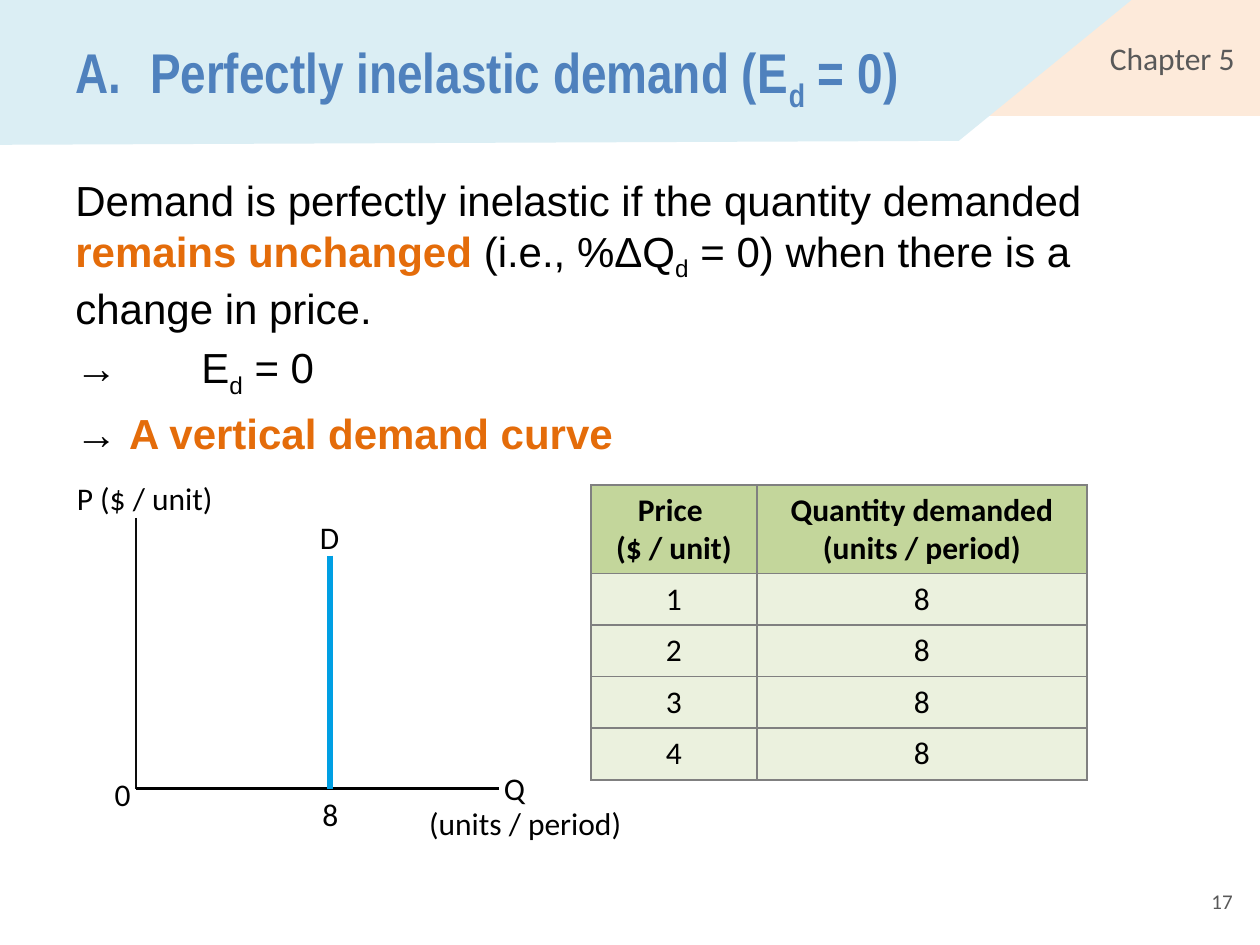
import dataclasses
import typing

import lxml.etree
import pptx
import pptx.dml.color
import pptx.enum.shapes
import pptx.enum.text
import pptx.oxml.ns
import pptx.util

Cm = pptx.util.Cm
Align = pptx.enum.text.PP_ALIGN
Anchor = pptx.enum.text.MSO_ANCHOR
qn = pptx.oxml.ns.qn


@dataclasses.dataclass(frozen=True)
class Theme:
    blue: str = "4F81BD"
    sky: str = "DBEEF4"
    peach: str = "FDEADA"
    orange: str = "E46C0A"
    gray: str = "595959"
    black: str = "000000"
    axis: str = "0D0D0D"
    curve: str = "009FE3"
    head: str = "C3D69B"
    cell: str = "EBF1DE"
    grid: str = "808080"
    sans: str = "Arial"
    narrow: str = "Arial Narrow"
    label: str = "Calibri"
    title: int = 32
    body: int = 24
    text: int = 18
    small: int = 12


THEME = Theme()


class Part(typing.NamedTuple):
    text: str
    bold: bool = False
    color: str = THEME.black
    sub: bool = False


class Label(typing.NamedTuple):
    text: str
    left: float
    top: float
    width: float


class Line(typing.NamedTuple):
    x1: float
    y1: float
    x2: float
    y2: float
    color: str
    width: float


def rgb(color: str) -> pptx.dml.color.RGBColor:
    return pptx.dml.color.RGBColor.from_string(color)


def write(para, *parts, font=THEME.label, size=THEME.text, color=None,
          bold=False, align=Align.LEFT, before=0, hang=0, tab=0) -> None:
    """Fill a paragraph with strings or Parts; a newline is a line break."""
    para.alignment = align
    para.space_before = pptx.util.Pt(before)
    props = para._p.get_or_add_pPr()
    if hang:
        props.set("marL", str(Cm(hang)))
        props.set("indent", str(-Cm(hang)))
    if tab:
        tabs = lxml.etree.SubElement(props, qn("a:tabLst"))
        lxml.etree.SubElement(tabs, qn("a:tab"), pos=str(Cm(tab)), algn="l")
    for part in parts:
        if isinstance(part, str):
            part = Part(part)
        for i, piece in enumerate(part.text.split("\n")):
            if i:
                para.add_line_break()
            run = para.add_run()
            run.text = piece
            run.font.name = font
            run.font.size = pptx.util.Pt(size)
            run.font.bold = bold or part.bold
            run.font.color.rgb = rgb(color or part.color)
            if part.sub:
                run.font._element.set("baseline", "-25000")


def add_box(shapes, left: float, top: float, width: float, height: float):
    frame = shapes.add_textbox(Cm(left), Cm(top), Cm(width), Cm(height)).text_frame
    frame.word_wrap = True
    return frame


def paint(shape, color: str) -> None:
    shape.shadow.inherit = False
    shape.fill.solid()
    shape.fill.fore_color.rgb = rgb(color)
    shape.line.fill.background()


def add_line(shapes, line: Line) -> None:
    ends = [Cm(v) for v in line[:4]]
    item = shapes.add_connector(pptx.enum.shapes.MSO_CONNECTOR.STRAIGHT, *ends)
    item.line.color.rgb = rgb(line.color)
    item.line.width = pptx.util.Pt(line.width)
    lxml.etree.SubElement(item._element.spPr, qn("a:effectLst"))


def edge(cell) -> None:
    props = cell._tc.get_or_add_tcPr()
    for i, side in enumerate(("lnL", "lnR", "lnT", "lnB")):
        line = lxml.etree.Element(qn("a:" + side), w="12700")
        fill = lxml.etree.SubElement(line, qn("a:solidFill"))
        lxml.etree.SubElement(fill, qn("a:srgbClr"), val=THEME.grid)
        props.insert(i, line)


def add_bands(shapes) -> None:
    tab = shapes.add_shape(pptx.enum.shapes.MSO_SHAPE.RECTANGLE,
                           Cm(18.69), 0, Cm(6.71), Cm(2.34))
    paint(tab, THEME.peach)
    tab.text_frame.margin_right = Cm(0.51)
    tab.text_frame.vertical_anchor = Anchor.MIDDLE
    write(tab.text_frame.paragraphs[0], "Chapter 5", color=THEME.gray,
          align=Align.RIGHT)
    path = shapes.build_freeform(0, 0)
    path.add_line_segments([(Cm(x), Cm(y)) for x, y in
                            ((22.81, 0), (19.33, 2.84), (0, 2.92))])
    paint(path.convert_to_shape(), THEME.sky)


def add_title(slide) -> None:
    title = slide.shapes.title
    title.left, title.top, title.width, title.height = (
        Cm(v) for v in (1.27, 0.53, 18.03, 2.01))
    frame = title.text_frame
    frame.auto_size = pptx.enum.text.MSO_AUTO_SIZE.NONE
    frame.vertical_anchor = Anchor.MIDDLE
    write(frame.paragraphs[0], "A.\tPerfectly inelastic demand (E",
          Part("d", sub=True), " = 0)", font=THEME.narrow, size=THEME.title,
          color=THEME.blue, bold=True, hang=1.5)
    slide.shapes._spTree.append(title._element)  # bring above the bands


def add_body(shapes) -> None:
    frame = add_box(shapes, 1.27, 3.4, 22.86, 5.79)
    sub = Part("d", sub=True)
    look = dict(font=THEME.sans, size=THEME.body)
    write(frame.paragraphs[0],
          "Demand is perfectly inelastic if the quantity demanded ",
          Part("remains unchanged ", True, THEME.orange), "(i.e., %ΔQ", sub,
          " = 0) when there is a change in price.", **look)
    write(frame.add_paragraph(), "→\tE", sub, " = 0", before=5, tab=2.54, **look)
    write(frame.add_paragraph(), "→ ",
          Part("A vertical demand curve", True, THEME.orange), before=5, **look)


def add_graph(shapes) -> None:
    left, base, mid = 2.74, 15.9, 6.65
    for line in (Line(left, 10.44, left, base, THEME.axis, 1.5),
                 Line(left, base, 10.06, base, THEME.black, 1.5),
                 Line(mid, 11.2, mid, base, THEME.curve, 3)):
        add_line(shapes, line)
    for label in (Label("0", 2.06, 15.49, 1.47),
                  Label("Q", 9.91, 15.37, 1.24),
                  Label("P ($ / unit)", 1.3, 9.53, 3.53),
                  Label("D", 6.2, 10.31, 1.3),
                  Label("8", 6.25, base, 1.3),
                  Label("(units / period)", 8.4, 16.08, 5.3)):
        frame = add_box(shapes, label.left, label.top, label.width, 1.02)
        write(frame.paragraphs[0], label.text)


def add_grid(shapes) -> None:
    rows = [("Price \n($ / unit)", "Quantity demanded (units / period)")]
    rows += [(str(price), "8") for price in range(1, 5)]
    table = shapes.add_table(len(rows), 2, Cm(11.91), Cm(9.78),
                             Cm(10), Cm(5.94)).table
    for col, width in zip(table.columns, (3.35, 6.65)):
        col.width = Cm(width)
    for r, row in enumerate(rows):
        table.rows[r].height = Cm(1.04 if r else 1.78)
        for c, text in enumerate(row):
            cell = table.cell(r, c)
            cell.fill.solid()
            cell.fill.fore_color.rgb = rgb(THEME.cell if r else THEME.head)
            cell.vertical_anchor = Anchor.MIDDLE if r else Anchor.TOP
            edge(cell)
            write(cell.text_frame.paragraphs[0], text, bold=r == 0,
                  align=Align.CENTER)


def main() -> None:
    deck = pptx.Presentation()
    deck.slide_width, deck.slide_height = Cm(25.4), Cm(19.05)
    slide = deck.slides.add_slide(deck.slide_layouts[5])
    shapes = slide.shapes
    # Header
    add_bands(shapes)
    add_title(slide)
    # Content
    add_body(shapes)
    add_graph(shapes.add_group_shape().shapes)
    add_grid(shapes)
    # Page number
    foot = add_box(shapes, 19.18, 17.65, 5.92, 1.02)
    foot.vertical_anchor = Anchor.MIDDLE
    write(foot.paragraphs[0], "17", size=THEME.small, color=THEME.gray,
          align=Align.RIGHT)
    deck.save("out.pptx")


if __name__ == "__main__":
    main()
